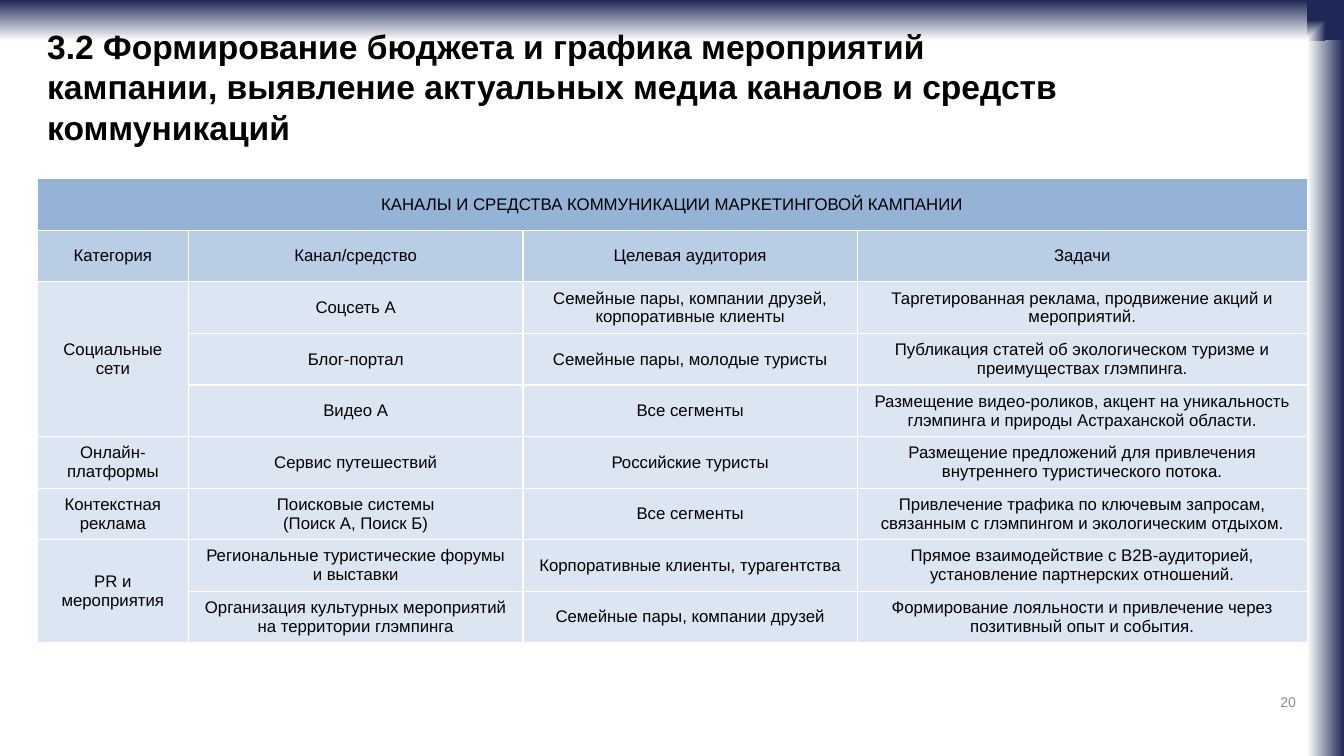
import pptx
import pptx.dml.color
import pptx.enum.shapes
import pptx.enum.text
import pptx.oxml
import pptx.oxml.ns
import pptx.util
from lxml import etree

Cm = pptx.util.Cm
ALIGN = pptx.enum.text.PP_ALIGN
MIDDLE = pptx.enum.text.MSO_ANCHOR.MIDDLE

SLIDE_WIDTH, SLIDE_HEIGHT = 33.87, 19.05
EDGE_LEFT, EDGE_WIDTH, BAND_HEIGHT = 32.94, 0.93, 1.02
LEFT = 0.94
WHITE, NAVY, BLACK, GREY = "FFFFFF", "1E2856", "000000", "8C8C8C"
BANNER_FILL, HEADER_FILL, BODY_FILL = "95B3D7", "B9CDE5", "DCE6F2"

TITLE = ("3.2 Формирование бюджета и графика мероприятий кампании, "
         "выявление актуальных медиа каналов и средств коммуникаций")
COLUMN_WIDTHS = [3.81, 8.43, 8.43, 11.33]
ROW_HEIGHT = 1.3
CELL_MARGIN = 0.13

# None marks a cell covered by a merged one
CHANNELS = [
    ["КАНАЛЫ И СРЕДСТВА КОММУНИКАЦИИ МАРКЕТИНГОВОЙ КАМПАНИИ", None, None, None],
    ["Категория", "Канал/средство", "Целевая аудитория", "Задачи"],
    ["Социальные\nсети", "Соцсеть А",
     "Семейные пары, компании друзей, корпоративные клиенты",
     "Таргетированная реклама, продвижение акций и мероприятий."],
    [None, "Блог-портал", "Семейные пары, молодые туристы",
     "Публикация статей об экологическом туризме и преимуществах глэмпинга."],
    [None, "Видео А", "Все сегменты",
     "Размещение видео-роликов, акцент на уникальность глэмпинга и природы "
     "Астраханской области."],
    ["Онлайн-платформы", "Сервис путешествий", "Российские туристы",
     "Размещение предложений для привлечения внутреннего туристического потока."],
    ["Контекстная реклама", "Поисковые системы\n(Поиск А, Поиск Б)", "Все сегменты",
     "Привлечение трафика по ключевым запросам, связанным с глэмпингом "
     "и экологическим отдыхом."],
    ["PR и\nмероприятия", "Региональные туристические форумы\nи выставки",
     "Корпоративные клиенты, турагентства",
     "Прямое взаимодействие с B2B-аудиторией, установление партнерских отношений."],
    [None, "Организация культурных мероприятий на территории глэмпинга",
     "Семейные пары, компании друзей",
     "Формирование лояльности и привлечение через позитивный опыт и события."],
]
# First and last cell of each merged block, as (row, column)
MERGES = [((0, 0), (0, 3)), ((2, 0), (4, 0)), ((7, 0), (8, 0))]


def color(value):
    return pptx.dml.color.RGBColor.from_string(value)


def set_values(target, values):
    for name, value in values.items():
        setattr(target, name, value)


def format_text(frame, size, fill=BLACK, bold=False, align=ALIGN.LEFT):
    for para in frame.paragraphs:
        para.alignment = align
        for span in para.runs:
            set_values(span.font, {"name": "Arial", "size": pptx.util.Pt(size), "bold": bold})
            span.font.color.rgb = color(fill)


def add_text(page, text, place, **style):
    box = page.shapes.add_textbox(*map(Cm, place))
    frame = box.text_frame
    set_values(frame, {"word_wrap": True, "vertical_anchor": MIDDLE, "text": text})
    format_text(frame, **style)


def add_gradient_bar(page, place, angle=0):
    bar = page.shapes.add_shape(pptx.enum.shapes.MSO_SHAPE.RECTANGLE, *map(Cm, place))
    bar.shadow.inherit = False
    bar.line.fill.background()
    bar.fill.gradient()
    bar.fill.gradient_angle = angle
    for stop, value in zip(bar.fill.gradient_stops, (WHITE, NAVY)):
        stop.color.rgb = color(value)
    return bar


def spread_from_bottom_left(bar):
    linear = next(bar.element.iter(pptx.oxml.ns.qn("a:lin")))
    gradient = linear.getparent()
    gradient.remove(linear)
    spread = etree.SubElement(gradient, pptx.oxml.ns.qn("a:path"), {"path": "rect"})
    etree.SubElement(spread, pptx.oxml.ns.qn("a:fillToRect"), {"t": "100000", "r": "100000"})


def add_borders(cell):
    properties = cell._tc.get_or_add_tcPr()
    for side in ("lnL", "lnR", "lnT", "lnB"):
        properties.append(pptx.oxml.parse_xml(
            f'<a:{side} {pptx.oxml.ns.nsdecls("a")} w="12700"><a:solidFill>'
            f'<a:srgbClr val="{WHITE}"/></a:solidFill></a:{side}>'))


def add_channel_table(page):
    size = (sum(COLUMN_WIDTHS), ROW_HEIGHT * len(CHANNELS))
    table = page.shapes.add_table(len(CHANNELS), len(COLUMN_WIDTHS),
                                  *map(Cm, (LEFT, 4.5, *size))).table
    for column, width in zip(table.columns, COLUMN_WIDTHS):
        column.width = Cm(width)
    margins = {f"margin_{side}": Cm(CELL_MARGIN) for side in ("left", "right", "top", "bottom")}
    for row_index, texts in enumerate(CHANNELS):
        table.rows[row_index].height = Cm(ROW_HEIGHT)
        fill = {0: BANNER_FILL, 1: HEADER_FILL}.get(row_index, BODY_FILL)
        for column_index, text in enumerate(texts):
            cell = table.cell(row_index, column_index)
            set_values(cell, {**margins, "vertical_anchor": MIDDLE})
            add_borders(cell)
            cell.fill.solid()
            cell.fill.fore_color.rgb = color(fill)
            if text:
                cell.text_frame.text = text
                format_text(cell.text_frame, size=12, align=ALIGN.CENTER)
    for first, last in MERGES:
        table.cell(*first).merge(table.cell(*last))


def main():
    deck = pptx.Presentation()
    set_values(deck, {"slide_width": Cm(SLIDE_WIDTH), "slide_height": Cm(SLIDE_HEIGHT)})
    page = deck.slides.add_slide(deck.slide_layouts[6])

    # Right edge, top band and the corner where they meet
    add_gradient_bar(page, (EDGE_LEFT, 0, EDGE_WIDTH, SLIDE_HEIGHT))
    add_gradient_bar(page, (0, 0, SLIDE_WIDTH, BAND_HEIGHT), angle=90)
    spread_from_bottom_left(add_gradient_bar(page, (EDGE_LEFT, 0, EDGE_WIDTH, BAND_HEIGHT)))

    # Title and page number
    add_text(page, TITLE, (LEFT, 1.02, 26.67, 2.31), size=24, bold=True)
    add_text(page, "20", (30.73, 17.35, 2.18, 0.69), size=10, fill=GREY, align=ALIGN.RIGHT)

    # Communication channels
    add_channel_table(page)
    deck.save("out.pptx")


if __name__ == "__main__":
    main()
